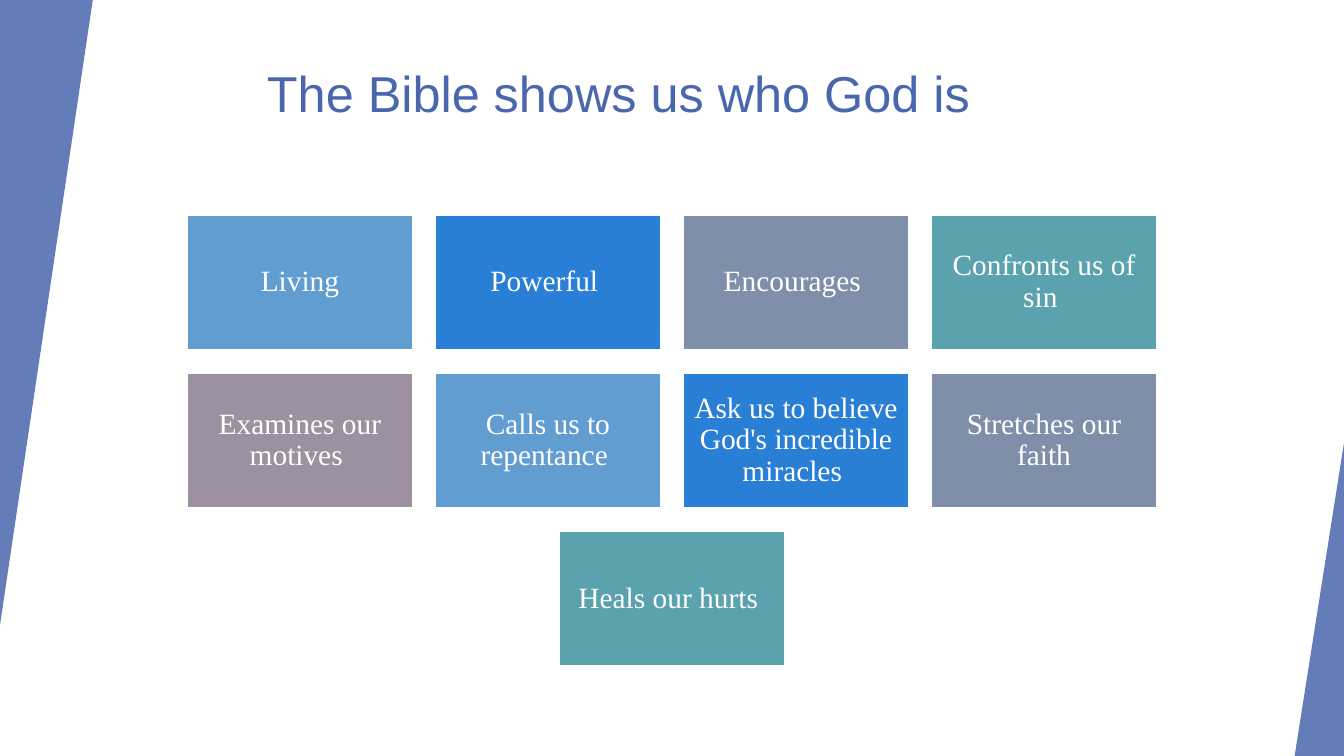
from itertools import cycle

from lxml import etree
from pptx import Presentation
from pptx.dml.color import RGBColor
from pptx.enum.shapes import MSO_SHAPE
from pptx.enum.text import MSO_ANCHOR, PP_ALIGN
from pptx.oxml.ns import qn
from pptx.util import Inches, Pt

TRIANGLE, RECTANGLE = MSO_SHAPE.ISOSCELES_TRIANGLE, MSO_SHAPE.RECTANGLE
MIDDLE, TOP = MSO_ANCHOR.MIDDLE, MSO_ANCHOR.TOP
CENTER, LEFT = PP_ALIGN.CENTER, PP_ALIGN.LEFT

WHITE = RGBColor(0xFF, 0xFF, 0xFF)
INDIGO = RGBColor(0x4A, 0x66, 0xAC)
SKY = RGBColor(0x62, 0x9D, 0xD1)
BLUE = RGBColor(0x29, 0x7F, 0xD5)
SLATE = RGBColor(0x7F, 0x8F, 0xA9)
TEAL = RGBColor(0x5A, 0xA2, 0xAE)
MAUVE = RGBColor(0x9D, 0x90, 0xA0)

SLIDE_W, SLIDE_H = 13.33, 7.5
CARD_W, CARD_H = 2.24, 1.34
PITCH_X, PITCH_Y = 2.46, 1.57
CARDS_TOP = 2.13
CARD_ROWS = [
    ["Living", "Powerful ", "Encourages ", "Confronts us of sin "],
    ["Examines our motives ", "Calls us to repentance ",
     "Ask us to believe God's incredible miracles ", "Stretches our faith"],
    ["Heals our hurts "],
]


def add_filled(kind, left, top, width, height, color):
    sp = slide.shapes.add_shape(kind, Inches(left), Inches(top), Inches(width), Inches(height))
    sp.shadow.inherit = False
    sp.fill.solid()
    sp.fill.fore_color.rgb = color
    return sp


def write(sp, text, font, align, anchor):
    """Put one paragraph into a shape, with font given as a dict of values."""
    tf = sp.text_frame
    tf.word_wrap = True
    tf.vertical_anchor = anchor
    p = tf.paragraphs[0]
    p.alignment = align
    p.line_spacing = 0.9
    r = p.add_run()
    r.text = text
    r.font.color.rgb = font["color"]
    for name in ("name", "size"):
        setattr(r.font, name, font[name])


prs = Presentation()
prs.slide_width, prs.slide_height = Inches(SLIDE_W), Inches(SLIDE_H)
slide = prs.slides.add_slide(prs.slide_layouts[6])

# Title
title = slide.shapes.add_textbox(Inches(2.55), Inches(0.64), Inches(8.23), Inches(1.2))
write(title, "The Bible shows us who God is",
      {"name": "Arial", "size": Pt(36), "color": INDIGO}, LEFT, TOP)

# Translucent wedges in the top left and bottom right corners
for left, top, width, height, rotation in [(0, 0, 0.92, 6.2, 180), (12.84, 4.39, 0.49, 3.11, 0)]:
    wedge = add_filled(TRIANGLE, left, top, width, height, INDIGO)
    wedge.adjustments[0] = 1
    wedge.rotation = rotation
    wedge.line.fill.background()
    color = wedge.fill._xPr.find(qn("a:solidFill"))[0]
    etree.SubElement(color, qn("a:alpha"), val="85000")

# Cards, each row centred on the slide
card_font = {"name": "Times New Roman", "size": Pt(21), "color": WHITE}
card_colors = cycle([SKY, BLUE, SLATE, TEAL, MAUVE])
for row, labels in enumerate(CARD_ROWS):
    row_width = (len(labels) - 1) * PITCH_X + CARD_W
    row_left = (SLIDE_W - row_width) / 2
    for col, label in enumerate(labels):
        card = add_filled(RECTANGLE, row_left + col * PITCH_X, CARDS_TOP + row * PITCH_Y,
                          CARD_W, CARD_H, next(card_colors))
        card.line.color.rgb = WHITE
        card.line.width = Pt(1.5)
        for side in ("left", "top", "right", "bottom"):
            setattr(card.text_frame, f"margin_{side}", Inches(0.09))
        write(card, label, card_font, CENTER, MIDDLE)

prs.save("out.pptx")
